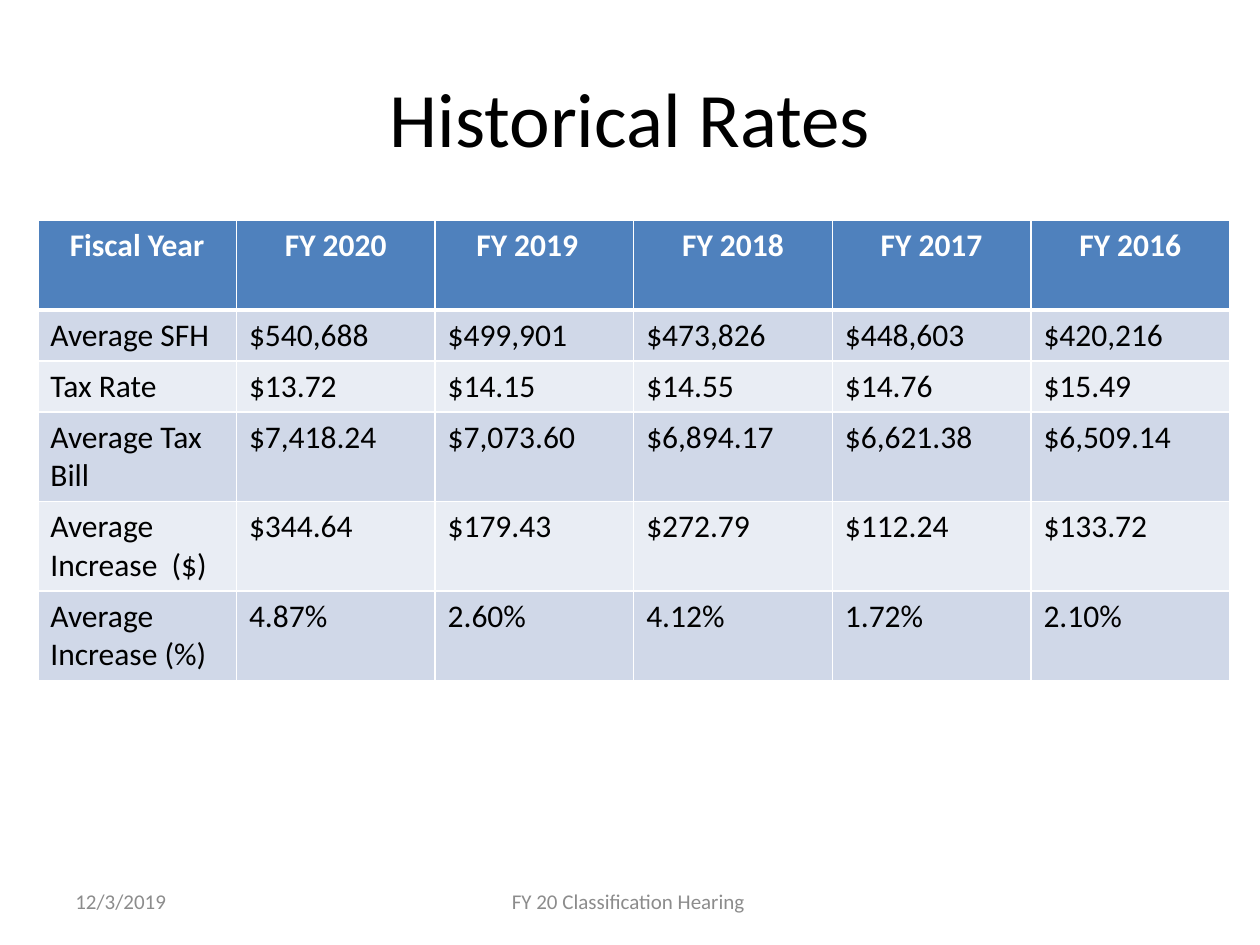
import dataclasses

import pptx
import pptx.dml.color
import pptx.enum.text
import pptx.oxml
import pptx.oxml.ns
import pptx.util

Inches = pptx.util.Inches
Pt = pptx.util.Pt
Align = pptx.enum.text.PP_ALIGN
Anchor = pptx.enum.text.MSO_ANCHOR

FONT = "Calibri"
BLACK, WHITE, GRAY = "000000", "FFFFFF", "8C8C8C"
HEAD, BANDS = "4F81BD", ("D0D8E8", "E9EDF4")


@dataclasses.dataclass
class Row:
    height: float
    cells: list[str]


@dataclasses.dataclass
class Note:
    text: str
    left: float
    width: float
    align: Align


ROWS = [
    Row(0.71, ["Fiscal Year", "FY 2020", "FY 2019  ", "FY 2018", "FY 2017", "FY 2016"]),
    Row(0.4, ["Average SFH", "$540,688", "$499,901", "$473,826", "$448,603", "$420,216"]),
    Row(0.4, ["Tax Rate", "$13.72", "$14.15", "$14.55", "$14.76", "$15.49"]),
    Row(0.71, ["Average Tax Bill", "$7,418.24", "$7,073.60", "$6,894.17", "$6,621.38", "$6,509.14"]),
    Row(0.71, ["Average Increase  ($)", "$344.64", "$179.43", "$272.79", "$112.24", "$133.72"]),
    Row(0.71, ["Average Increase (%)", "4.87%", "2.60%", "4.12%", "1.72%", "2.10%"]),
]
NOTES = [
    Note("12/3/2019", 0.5, 2.33, Align.LEFT),
    Note("FY 20 Classification Hearing ", 3.42, 3.17, Align.CENTER),
]


def color(code: str) -> pptx.dml.color.RGBColor:
    return pptx.dml.color.RGBColor.from_string(code)


def write(frame, text: str, size: float, code: str, align: Align, bold: bool = False) -> None:
    frame.text = text
    para = frame.paragraphs[0]
    para.alignment = align
    for run in para.runs:
        font = run.font
        font.name, font.size, font.bold = FONT, Pt(size), bold
        font.color.rgb = color(code)


def border(cell, top: float, bottom: float) -> None:
    props = cell._tc.get_or_add_tcPr()
    for side, width in (("L", 1), ("R", 1), ("T", top), ("B", bottom)):
        props.append(pptx.oxml.parse_xml(
            f'<a:ln{side} {pptx.oxml.ns.nsdecls("a")} w="{Pt(width)}">'
            f'<a:solidFill><a:srgbClr val="{WHITE}"/></a:solidFill></a:ln{side}>'))


def draw_table(slide, rows: list[Row]) -> None:
    count = len(rows[0].cells)
    height = sum(row.height for row in rows)
    table = slide.shapes.add_table(
        len(rows), count, Inches(0.3), Inches(1.75), Inches(9.46), Inches(height)).table
    for i, row in enumerate(rows):
        table.rows[i].height = Inches(row.height)
        head = i == 0
        for j, text in enumerate(row.cells):
            cell = table.cell(i, j)
            # Borders come before the fill in the cell properties
            border(cell, 3 if i == 1 else 1, 3 if head else 1)
            cell.fill.solid()
            cell.fill.fore_color.rgb = color(HEAD if head else BANDS[(i - 1) % 2])
            write(cell.text_frame, text, 18, WHITE if head else BLACK,
                  Align.CENTER if head else Align.LEFT, head)


def draw_note(slide, note: Note) -> None:
    box = slide.shapes.add_textbox(
        Inches(note.left), Inches(6.95), Inches(note.width), Inches(0.4))
    frame = box.text_frame
    frame.word_wrap = True
    frame.vertical_anchor = Anchor.MIDDLE
    write(frame, note.text, 12, GRAY, note.align)


def main() -> None:
    deck = pptx.Presentation()
    deck.slide_width, deck.slide_height = Inches(10), Inches(7.5)
    slide = deck.slides.add_slide(deck.slide_layouts[5])

    # Title
    title = slide.shapes.title
    title.left, title.top = Inches(0.5), Inches(0.3)
    title.width, title.height = Inches(9), Inches(1.25)
    title.text_frame.vertical_anchor = Anchor.MIDDLE
    write(title.text_frame, "Historical Rates", 44, BLACK, Align.CENTER)

    # Rates by year
    draw_table(slide, ROWS)

    # Date and footer
    for note in NOTES:
        draw_note(slide, note)

    deck.save("out.pptx")


if __name__ == "__main__":
    main()
